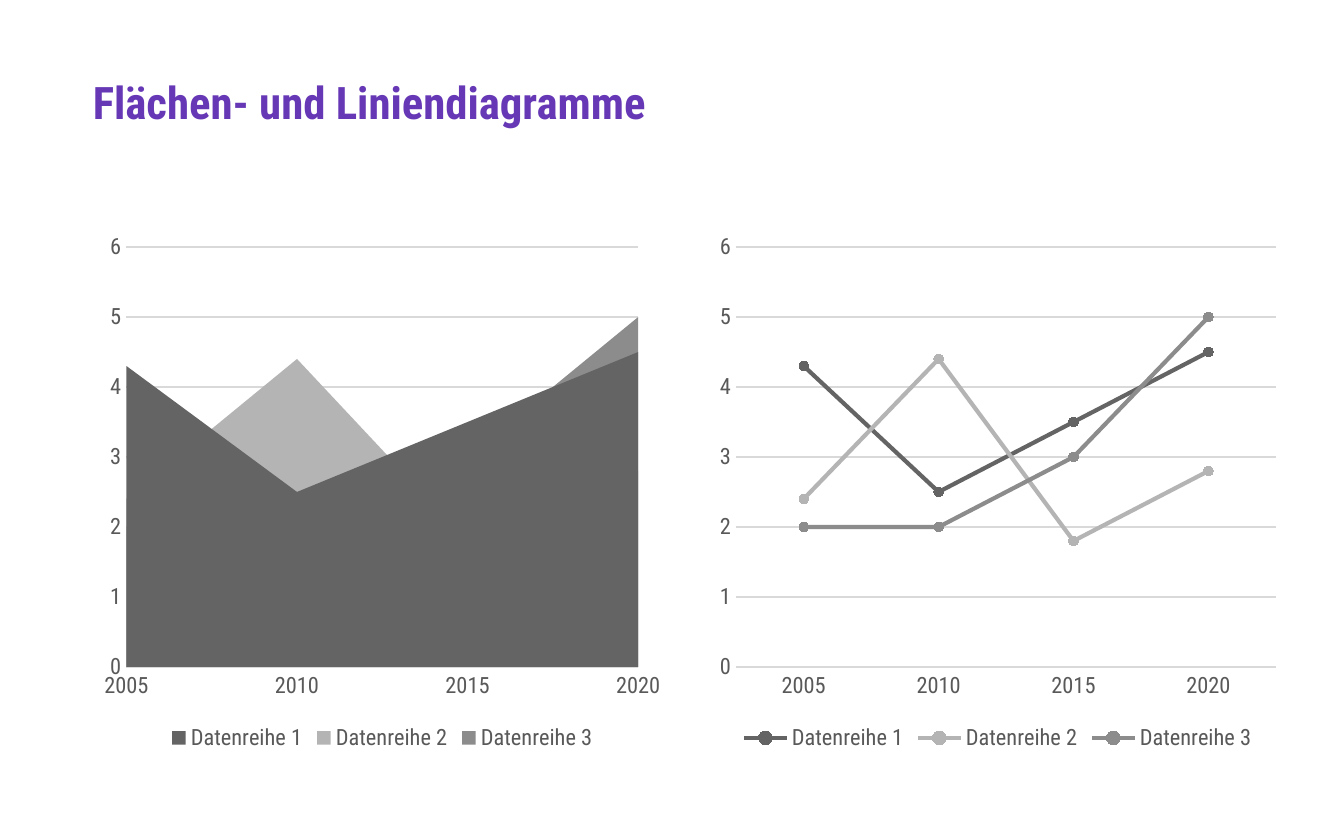
"""Build a slide with an area chart beside a line chart of the same data."""
from pptx import Presentation
from pptx.chart.data import CategoryChartData
from pptx.dml.color import RGBColor
from pptx.enum.chart import XL_CHART_TYPE, XL_LEGEND_POSITION, XL_MARKER_STYLE, XL_TICK_MARK
from pptx.enum.text import MSO_ANCHOR
from pptx.util import Inches, Pt

FONT = "Roboto Condensed"
GREY, RULE = "595959", "D9D9D9"
LEFT, TOP, COL, STEP, HEIGHT = 0.69, 1.66, 4.31, 4.58, 3.97
SERIES = [
    ("Datenreihe 1", (4.3, 2.5, 3.5, 4.5), "646464"),
    ("Datenreihe 2", (2.4, 4.4, 1.8, 2.8), "B4B4B4"),
    ("Datenreihe 3", (2, 2, 3, 5), "8C8C8C"),
]


def paint(fill, color):
    fill.solid()
    fill.fore_color.rgb = RGBColor.from_string(color)


def set_font(font, size, color, bold=False):
    font.name, font.size, font.bold = FONT, Pt(size), bold
    font.color.rgb = RGBColor.from_string(color)


prs = Presentation()
prs.slide_width, prs.slide_height = Inches(10), Inches(6.25)
s = prs.slides.add_slide(prs.slide_layouts[6])
paint(s.background.fill, "FFFFFF")

tf = s.shapes.add_textbox(Inches(LEFT), Inches(0.62), prs.slide_width - 2 * Inches(LEFT), Inches(0.32)).text_frame
tf.margin_left = tf.margin_right = tf.margin_top = tf.margin_bottom = 0
tf.word_wrap = True
tf.vertical_anchor = MSO_ANCHOR.MIDDLE
p = tf.paragraphs[0]
p.text = "Flächen- und Liniendiagramme"
p.line_spacing = 0.9
set_font(p.font, 24, "6638B6", True)

data = CategoryChartData()
data.categories = ["2005", "2010", "2015", "2020"]
for name, values, _ in SERIES:
    data.add_series(name, values)

for col, kind in enumerate((XL_CHART_TYPE.AREA, XL_CHART_TYPE.LINE_MARKERS)):
    chart = s.shapes.add_chart(
        kind, Inches(LEFT + col * STEP), Inches(TOP), Inches(COL), Inches(HEIGHT), data
    ).chart
    set_font(chart.font, 12, "000000")
    chart.has_title = False
    chart.has_legend = True
    chart.legend.position = XL_LEGEND_POSITION.BOTTOM
    chart.legend.include_in_layout = False
    set_font(chart.legend.font, 12, GREY)

    cat, val = chart.category_axis, chart.value_axis
    for axis in (cat, val):
        axis.major_tick_mark = axis.minor_tick_mark = XL_TICK_MARK.NONE
        set_font(axis.tick_labels.font, 12, GREY)
    cat.has_major_gridlines = False
    val.has_major_gridlines = True
    val.minimum_scale, val.maximum_scale, val.major_unit = 0, 6, 1
    val.format.line.fill.background()
    for line in (cat.format.line, val.major_gridlines.format.line):
        paint(line.fill, RULE)
        line.width = Pt(0.75)

    plot = chart.plots[0]
    plot.vary_by_categories = False
    for series, (_, _, color) in zip(plot.series, SERIES):
        if kind == XL_CHART_TYPE.AREA:
            paint(series.format.fill, color)
            series.format.line.fill.background()
        else:
            series.smooth = False
            paint(series.format.line.fill, color)
            series.format.line.width = Pt(2.25)
            series.marker.style = XL_MARKER_STYLE.CIRCLE
            series.marker.size = 5
            paint(series.marker.format.fill, color)
            paint(series.marker.format.line.fill, color)
    if kind == XL_CHART_TYPE.AREA:
        chart.element.xpath(".//c:valAx/c:crossBetween")[0].set("val", "midCat")

prs.save("out.pptx")
